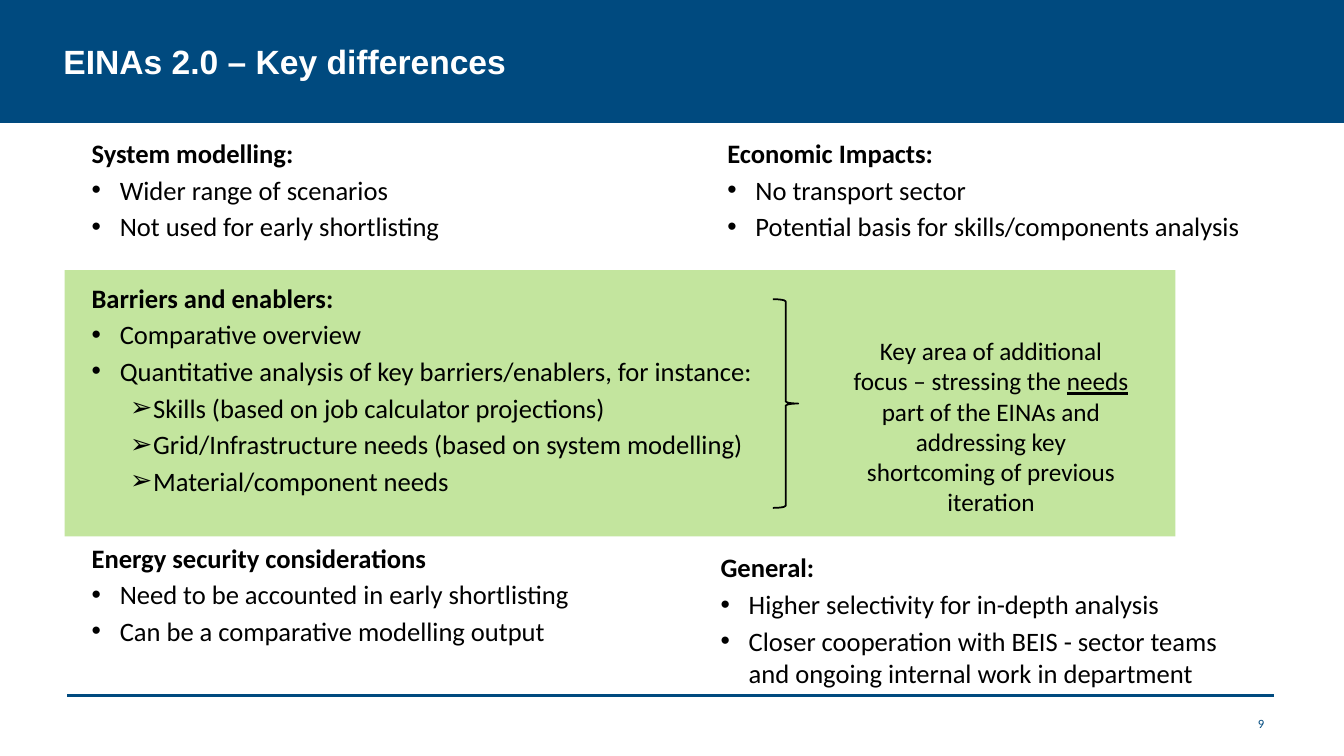
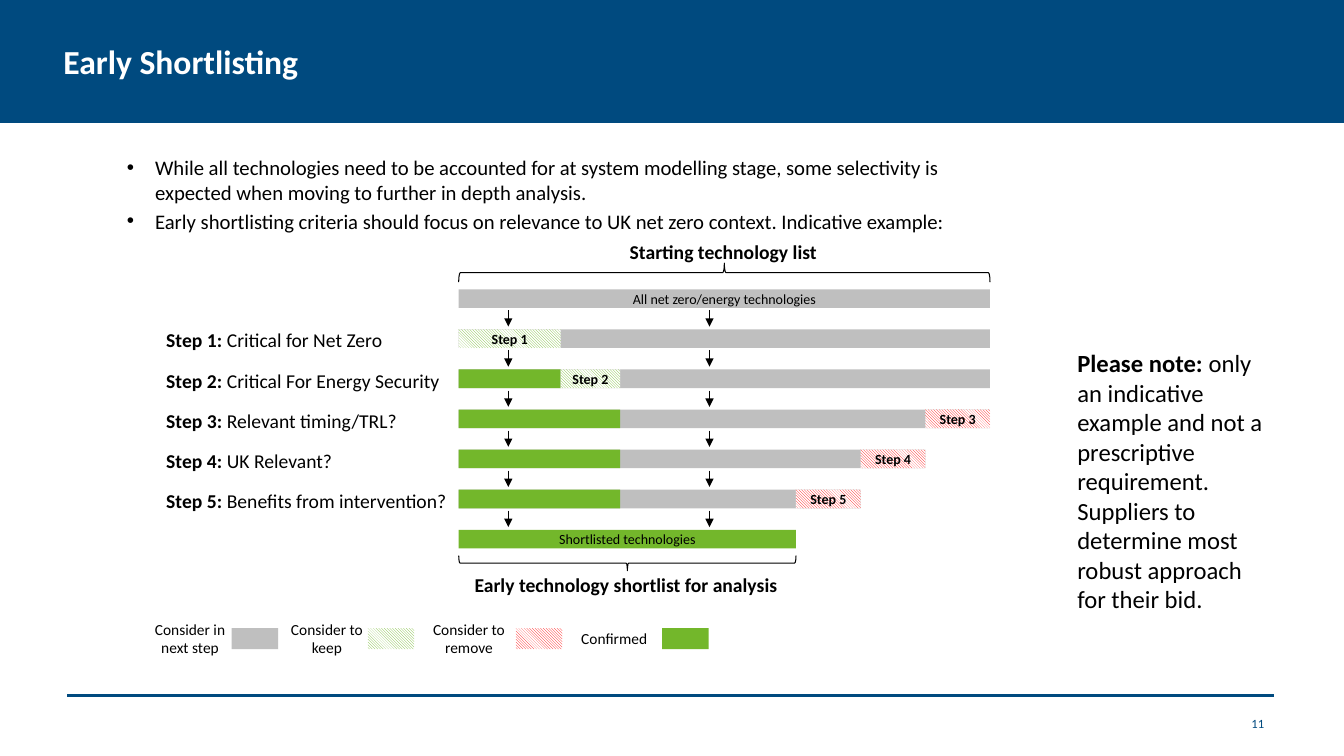
from dataclasses import dataclass

from lxml.etree import SubElement as Sub
from pptx import Presentation
from pptx.dml.color import RGBColor as RGB
from pptx.enum.dml import MSO_PATTERN as Pat
from pptx.enum.shapes import MSO_CONNECTOR as Conn, MSO_SHAPE as Kind
from pptx.enum.text import MSO_ANCHOR as Anchor, PP_ALIGN as Align
from pptx.oxml.ns import qn
from pptx.util import Cm, Pt


@dataclass(frozen=True)
class Theme:
    # Colours
    navy: str = "004A7F"
    lime: str = "92D050"
    green: str = "73B72B"
    grey: str = "BFBFBF"
    red: str = "FF0000"
    black: str = "000000"
    white: str = "FFFFFF"
    # Fonts and type sizes in points
    font: str = "Calibri"
    title: float = 24
    body: float = 19
    focus: float = 18
    note: float = 17.6
    intro: float = 14.8
    label: float = 14
    key: float = 11
    tag: float = 10
    page: float = 9
    # Paragraph gap as a share of type size
    gap: float = 0.18


T = Theme()
KEEP = (T.green, Pat.DARK_DOWNWARD_DIAGONAL)
DROP = (T.red, Pat.LIGHT_DOWNWARD_DIAGONAL)
DROP_KEY = (T.red, Pat.DARK_DOWNWARD_DIAGONAL)

# Bullet styles: sign, left margin and hang in cm
BULLETS = {"dot": ("•", 0.71, 0.71), "arrow": ("➢", 1.55, 0.58)}


# ---- Basic parts; every box is (left, top, width, height) in cm ----
def place(box):
    return [Cm(v) for v in box]


def bullet(para, style):
    sign, left, hang = BULLETS[style]
    props = para._p.get_or_add_pPr()
    props.set("marL", str(Cm(left)))
    props.set("indent", str(-Cm(hang)))
    Sub(props, qn("a:buFont")).set("typeface", "Arial")
    Sub(props, qn("a:buChar")).set("char", sign)


def write(frame, paras, size, color=T.black, align=Align.LEFT,
          anchor=Anchor.TOP, font=T.font):
    """Fill a frame; each paragraph is (bullet style, [(text, marks), ...])."""
    frame.word_wrap = True
    frame.vertical_anchor = anchor
    for i, (style, runs) in enumerate(paras):
        para = frame.add_paragraph() if i else frame.paragraphs[0]
        para.alignment = align
        if i:
            para.space_before = Pt(round(size * T.gap, 1))
        if style:
            bullet(para, style)
        for words, marks in runs:
            run = para.add_run()
            run.text = words
            run.font.name = font
            run.font.size = Pt(size)
            run.font.bold = "b" in marks
            run.font.underline = "u" in marks
            run.font.color.rgb = RGB.from_string(color)


def text(slide, box, paras, size, **look):
    frame = slide.shapes.add_textbox(*place(box)).text_frame
    write(frame, paras, size, **look)


def plain(words, marks=""):
    return [("", [(words, marks)])]


def rect(slide, box, paint):
    """Paint is a colour, or a (colour, pattern) pair."""
    shape = slide.shapes.add_shape(Kind.RECTANGLE, *place(box))
    shape.shadow.inherit = False
    shape.line.fill.background()
    fill = shape.fill
    if isinstance(paint, tuple):
        fill.patterned()
        fill.pattern = paint[1]
        fill.fore_color.rgb = RGB.from_string(paint[0])
        fill.back_color.rgb = RGB.from_string(T.white)
    else:
        fill.solid()
        fill.fore_color.rgb = RGB.from_string(paint)
    return shape


def bar(slide, box, paint, words="", marks=""):
    shape = rect(slide, box, paint)
    if words:
        frame = shape.text_frame
        frame.margin_top = frame.margin_bottom = 0
        write(frame, plain(words, marks), T.tag, align=Align.CENTER,
              anchor=Anchor.MIDDLE)


def brace(slide, box, width, turn=0):
    """Draw a brace in its visible box, turned by 0, 90 or 270 degrees."""
    x, y, w, h = box
    if turn:
        x, y, w, h = x + (w - h) / 2, y + (h - w) / 2, h, w
    shape = slide.shapes.add_shape(Kind.RIGHT_BRACE, *place((x, y, w, h)))
    shape.rotation = turn
    shape.shadow.inherit = False
    shape.fill.background()
    shape.line.color.rgb = RGB.from_string(T.black)
    shape.line.width = Pt(width)


def line(slide, start, end, color, width, head=False):
    conn = slide.shapes.add_connector(Conn.STRAIGHT, *place(start + end))
    conn.line.color.rgb = RGB.from_string(color)
    conn.line.width = Pt(width)
    props = conn._element.spPr
    if head:
        Sub(props.find(qn("a:ln")), qn("a:tailEnd")).set("type", "triangle")
    Sub(props, qn("a:effectLst"))


# ---- Shared frame: title band, foot rule, page number ----
def base(deck, title, page, font=T.font):
    slide = deck.slides.add_slide(deck.slide_layouts[6])
    line(slide, (1.7, 17.53), (32.11, 17.53), T.navy, 2.25)
    band = rect(slide, (0, 0, 33.87, 3.1), T.navy)
    band.text_frame.margin_left = band.text_frame.margin_right = Cm(1.6)
    write(band.text_frame, plain(title, "b"), T.title, color=T.white,
          anchor=Anchor.MIDDLE, font=font)
    text(slide, (24.21, 17.73, 7.9, 1.02), plain(page), T.page,
         color=T.navy, align=Align.RIGHT, anchor=Anchor.MIDDLE)
    return slide


# ---- Slide 1: key differences ----
def topic(slide, box, head, dots, arrows=()):
    paras = plain(head, "b")
    paras += [("dot", [(item, "")]) for item in dots]
    paras += [("arrow", [(item, "")]) for item in arrows]
    text(slide, box, paras, T.body)


def focus(slide, box):
    x, y, w, h = box
    panel = rect(slide, box, T.lime)
    tint = panel._element.spPr.find(qn("a:solidFill"))[0]
    Sub(tint, qn("a:alpha")).set("val", "55000")
    topic(slide, (x + 0.43, y + 0.16, 17.81, h - 0.4),
          "Barriers and enablers:",
          ["Comparative overview",
           "Quantitative analysis of key barriers/enablers, for instance:"],
          ["Skills (based on job calculator projections)",
           "Grid/Infrastructure needs (based on system modelling)",
           "Material/component needs"])
    brace(slide, (x + 17.85, y + 0.73, 0.64, 5.26), 1.25)
    runs = [("Key area of additional focus – stressing the ", ""),
            ("needs", "u"),
            (" part of the EINAs and addressing key shortcoming of previous "
             "iteration", "")]
    text(slide, (x + 19.6, y + 1.52, 7.49, 4.88), [("", runs)], T.focus,
         align=Align.CENTER)


def changes(deck):
    slide = base(deck, "EINAs 2.0 – Key differences", "9", font="Arial")
    focus(slide, (1.63, 6.81, 27.99, 6.71))
    topic(slide, (2.06, 3.33, 15, 3.28), "System modelling:",
          ["Wider range of scenarios", "Not used for early shortlisting"])
    topic(slide, (18.08, 3.33, 13.89, 3.28), "Economic Impacts:",
          ["No transport sector",
           "Potential basis for skills/components analysis"])
    topic(slide, (2.06, 13.52, 15, 3.28), "Energy security considerations",
          ["Need to be accounted in early shortlisting",
           "Can be a comparative modelling output"])
    topic(slide, (17.91, 13.77, 13.89, 3.81), "General:",
          ["Higher selectivity for in-depth analysis",
           "Closer cooperation with BEIS - sector teams and ongoing internal "
           "work in department"])


# ---- Slide 2: early shortlisting ----
STEPS = ["Critical for Net Zero", "Critical For Energy Security",
         "Relevant timing/TRL?", "UK Relevant?",
         "Benefits from intervention?"]


def funnel(slide, box):
    x, y, full, h = box
    thick = 0.47
    pitch = (h - thick) / (len(STEPS) + 1)
    kept = [2.57, 1.5]  # share confirmed by steps 1 and 2
    cut = 1.63          # share removed by each later step

    # Starting list
    text(slide, (x + 4.06, y - 1.37, 8.18, 0.84),
         plain("Starting technology list", "b"), T.label)
    brace(slide, (x, y - 0.66, full, 0.48), 0.75, 270)
    bar(slide, (x, y, full, thick), T.grey, "All net zero/energy technologies")

    # One row a step
    for i, step in enumerate(STEPS):
        top = y + (i + 1) * pitch
        wide = full - max(0, i - len(kept)) * cut
        done = sum(kept[:i])
        name = f"Step {i + 1}"
        text(slide, (x - 7.62, top - 0.15, 9.07, 0.79),
             [("", [(name + ": ", "b"), (step, "")])], T.label)
        bar(slide, (x, top, wide, thick), T.grey)
        if done:
            bar(slide, (x, top, done, thick), T.green)
        if i < len(kept):
            tag, paint = (x + done, top, kept[i], thick), KEEP
        else:
            tag, paint = (x + wide - cut, top, cut, thick), DROP
        bar(slide, tag, paint, name, "b")

    # Arrows into each row
    for i in range(1, len(STEPS) + 2):
        top = y + i * pitch
        for left in (x + 1.25, x + 6.32):
            line(slide, (left, top - 0.48), (left, top - 0.07), T.black,
                 0.75, head=True)

    # Final list
    end, top = full - 3 * cut, y + h - thick
    bar(slide, (x, top, end, thick), T.green, "Shortlisted technologies")
    brace(slide, (x, top + 0.65, end, 0.38), 0.75, 90)
    text(slide, (x + 0.15, top + 0.97, 9.07, 0.79),
         plain("Early technology shortlist for analysis", "b"), T.label)


def legend(slide, box):
    x, y, w, h = box
    # Label, label left, swatch left, paint
    keys = [("Consider in next step", 0, 2.28, T.grey),
            ("Consider to keep", 3.45, 5.71, KEEP),
            ("Consider to remove", 7.03, 9.44, DROP_KEY),
            ("Confirmed", 10.69, w - 1.17, T.green)]
    for words, left, swatch, paint in keys:
        text(slide, (x + left, y, 2.46, h), plain(words), T.key,
             align=Align.CENTER, anchor=Anchor.MIDDLE)
        bar(slide, (x + swatch, y + 0.34, 1.17, 0.53), paint)


def shortlist(deck):
    slide = base(deck, "Early Shortlisting", "11")
    intro = ["While all technologies need to be accounted for at system "
             "modelling stage, some selectivity is expected when moving to "
             "further in depth analysis.",
             "Early shortlisting criteria should focus on relevance to UK net "
             "zero context. Indicative example:"]
    text(slide, (2.95, 3.78, 22, 2.11),
         [("dot", [(item, "")]) for item in intro], T.intro)
    funnel(slide, (11.56, 7.29, 13.39, 6.53))
    legend(slide, (3.56, 15.49, 14.3, 1.2))
    note = [("Please note:", "b"),
            (" only an indicative example and not a prescriptive requirement. "
             "Suppliers to determine most robust approach for their bid.", "")]
    text(slide, (26.9, 8.64, 5.41, 5.87), [("", note)], T.note)


def main():
    deck = Presentation()
    deck.slide_width, deck.slide_height = Cm(33.87), Cm(19.05)
    changes(deck)
    shortlist(deck)
    deck.save("out.pptx")


if __name__ == "__main__":
    main()
